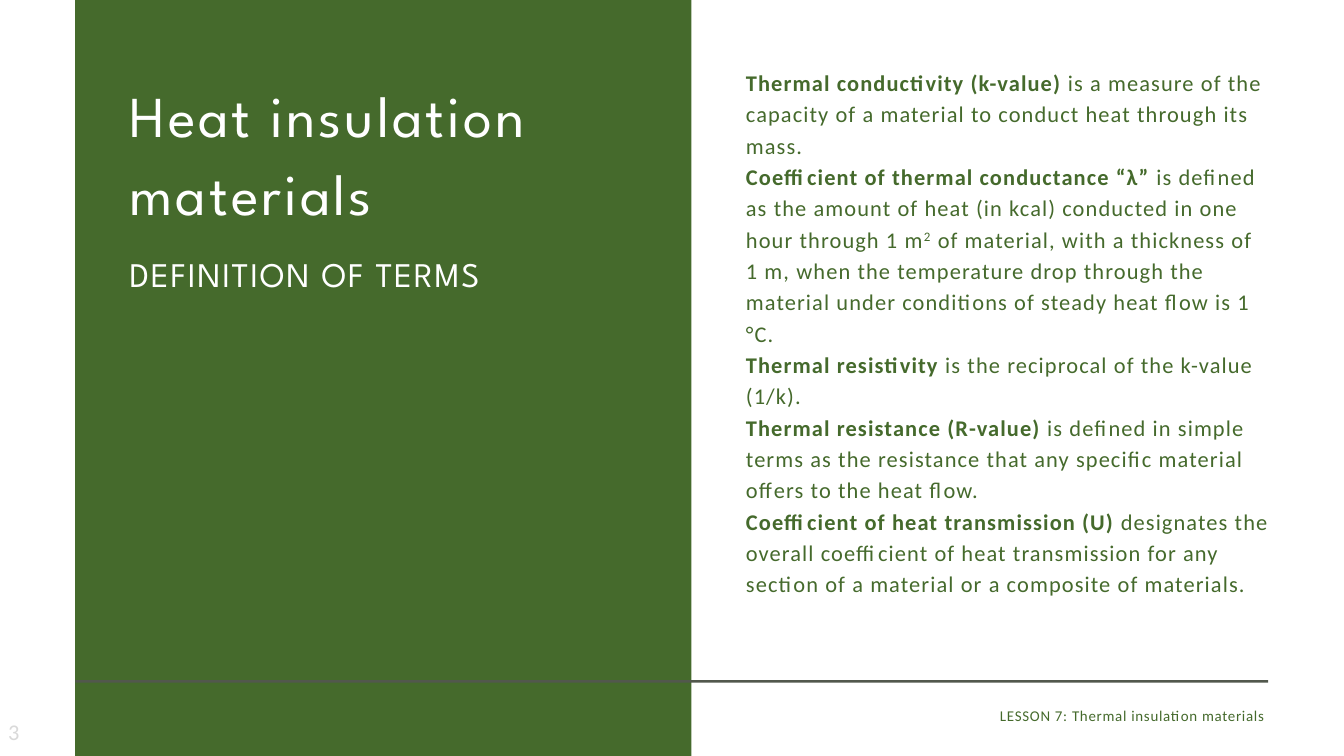
import pptx
import pptx.dml.color
import pptx.enum.shapes
import pptx.enum.text
import pptx.oxml.ns
import pptx.util
from pptx.util import Inches

GREEN = pptx.dml.color.RGBColor(0x45, 0x6A, 0x2C)
GREY = pptx.dml.color.RGBColor(0x52, 0x58, 0x4D)
PALE = pptx.dml.color.RGBColor(0xD9, 0xD9, 0xD9)
WHITE = pptx.dml.color.RGBColor(0xFF, 0xFF, 0xFF)
BODY_FONT = "Calibri"
TITLE_FONT = "League Spartan"
TRACKING = 0.05

PLAIN, BOLD, SUPERSCRIPT = "plain", "bold", "superscript"

DEFINITIONS = [
    [("Thermal conductivity (k-value) ", BOLD),
     ("is a measure of the capacity of a material to conduct heat through its mass.", PLAIN)],
    [("Coefficient of thermal conductance “λ” ", BOLD),
     ("is defined as the amount of heat (in kcal) conducted in one hour through 1 m", PLAIN),
     ("2", SUPERSCRIPT),
     (" of material, with a thickness of 1 m, when the temperature drop through the "
      "material under conditions of steady heat flow is 1 °C.", PLAIN)],
    [("Thermal resistivity ", BOLD),
     ("is the reciprocal of the k-value (1/k).", PLAIN)],
    [("Thermal resistance (R-value) ", BOLD),
     ("is defined in simple terms as the resistance that any specific material "
      "offers to the heat flow.", PLAIN)],
    [("Coefficient of heat transmission (U) ", BOLD),
     ("designates the overall coefficient of heat transmission for any section of "
      "a material or a composite of materials.", PLAIN)],
]


class SlideBuilder:
    def __init__(self, presentation):
        layout = presentation.slide_layouts.get_by_name("Title and Content")
        self.slide = presentation.slides.add_slide(layout)

    def rectangle(self, left, top, width, height, color):
        shape = self.slide.shapes.add_shape(
            pptx.enum.shapes.MSO_SHAPE.RECTANGLE, left, top, width, height)
        shape.shadow.inherit = False
        shape.fill.solid()
        shape.fill.fore_color.rgb = color
        shape.line.fill.background()
        return shape

    def send_to_back(self, shape):
        self.slide.shapes.element.insert(2, shape.element)

    def text_box(self, left, top, width, height, paragraphs, **style):
        shape = self.slide.shapes.add_textbox(left, top, width, height)
        self.set_text(shape, paragraphs, **style)

    def placeholder(self, index, left, top, width, height, paragraphs, **style):
        shape = self.slide.placeholders[index]
        shape.left, shape.top, shape.width, shape.height = left, top, width, height
        self.set_text(shape, paragraphs, **style)

    def set_text(self, shape, paragraphs, size, color, font=BODY_FONT, spacing=None,
                 align=pptx.enum.text.PP_ALIGN.LEFT, anchor=pptx.enum.text.MSO_ANCHOR.TOP):
        frame = shape.text_frame
        frame.word_wrap = True
        frame.auto_size = pptx.enum.text.MSO_AUTO_SIZE.NONE
        frame.vertical_anchor = anchor
        frame.margin_left = frame.margin_top = frame.margin_right = frame.margin_bottom = 0
        for number, runs in enumerate(paragraphs):
            paragraph = frame.add_paragraph() if number else frame.paragraphs[0]
            paragraph.alignment = align
            paragraph.space_before = pptx.util.Pt(0)
            if spacing:
                paragraph.line_spacing = pptx.util.Pt(spacing)
            if shape.is_placeholder:
                self.remove_bullet(paragraph)
            for text, kind in runs:
                self.add_run(paragraph, text, kind, size, color, font)

    def remove_bullet(self, paragraph):
        properties = paragraph._p.get_or_add_pPr()
        properties.set("marL", "0")
        properties.set("indent", "0")
        properties.append(pptx.oxml.parse_xml(
            f'<a:buNone {pptx.oxml.ns.nsdecls("a")}/>'))

    def add_run(self, paragraph, text, kind, size, color, font):
        run = paragraph.add_run()
        run.text = text
        run.font.size = pptx.util.Pt(size)
        run.font.name = font
        run.font.color.rgb = color
        run.font.bold = kind == BOLD
        properties = run._r.get_or_add_rPr()
        properties.set("spc", str(round(size * TRACKING * 100)))
        if kind == SUPERSCRIPT:
            properties.set("baseline", "30000")


def main():
    presentation = pptx.Presentation()
    presentation.slide_width = Inches(20)
    presentation.slide_height = Inches(11.25)
    builder = SlideBuilder(presentation)

    panel = builder.rectangle(
        Inches(1.12), 0, Inches(9.17), presentation.slide_height, GREEN)
    builder.send_to_back(panel)
    builder.rectangle(Inches(1.12), Inches(10.12), Inches(17.75), Inches(0.04), GREY)

    builder.placeholder(
        0, Inches(1.93), Inches(1.05), Inches(7.56), Inches(2.32),
        [[("Heat insulation materials", PLAIN)]],
        size=62, color=WHITE, font=TITLE_FONT, spacing=83.7)
    builder.text_box(
        Inches(1.93), Inches(3.72), Inches(7.56), Inches(0.67),
        [[("DEFINITION OF TERMS", PLAIN)]],
        size=37, color=WHITE, font=TITLE_FONT, spacing=48.1)
    builder.placeholder(
        1, Inches(11.1), Inches(0.96), Inches(7.78), Inches(8.55),
        DEFINITIONS, size=24, color=GREEN, spacing=33.6)
    builder.text_box(
        Inches(10.56), Inches(10.47), Inches(8.32), Inches(0.29),
        [[("LESSON 7: Thermal insulation materials ", PLAIN)]],
        size=16, color=GREEN, spacing=22.4, align=pptx.enum.text.PP_ALIGN.RIGHT)
    builder.text_box(
        Inches(0.12), Inches(10.69), Inches(0.9), Inches(0.4),
        [[("3", PLAIN)]],
        size=24, color=PALE, anchor=pptx.enum.text.MSO_ANCHOR.MIDDLE)

    presentation.save("out.pptx")


if __name__ == "__main__":
    main()
